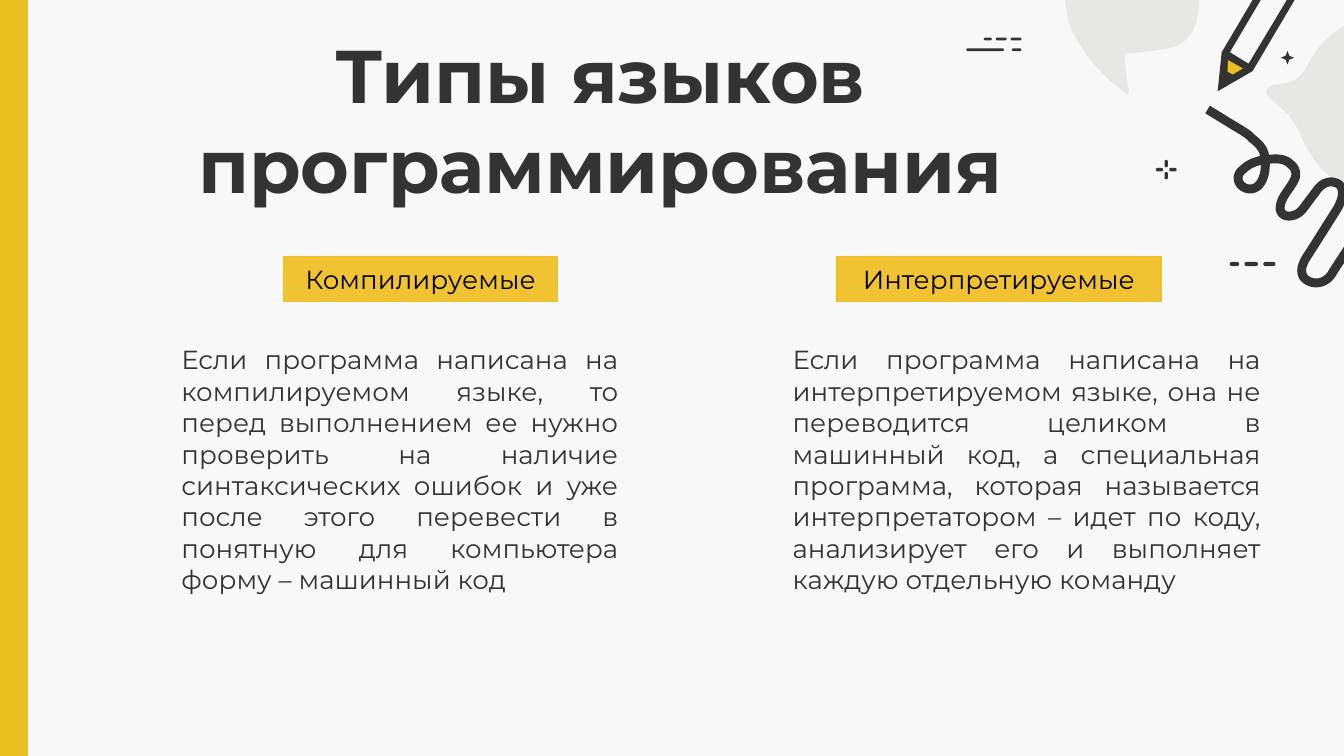
from pptx import Presentation, util as u
from pptx.dml.color import RGBColor
from pptx.enum import shapes, text

FONT = "Montserrat"
DARK, GREY, PAPER = "333333", "E7E7E5", "F8F8F8"
GOLD, AMBER = "EBC122", "F1C232"
KIND, ALIGN = shapes.MSO_SHAPE, text.PP_ALIGN
STEP = 2.54 / 100  # cm in one unit of the drawing grid


def color(code):
    return RGBColor.from_string(code)


def paint(shape, fill, line=None):
    shape.shadow.inherit = False
    shape.fill.solid()
    shape.fill.fore_color.rgb = color(fill)
    if line:
        shape.line.color.rgb = color(line)
        shape.line.width = u.Pt(0.75)
    else:
        shape.line.fill.background()
    return shape


def block(slide, kind, box, fill, line=None):
    shape = slide.shapes.add_shape(kind, *map(u.Cm, box))
    return paint(shape, fill, line)


def write(shape, words, size, align, code, bold=False):
    frame = shape.text_frame
    frame.word_wrap = True
    frame.margin_left = frame.margin_right = u.Cm(0.25)
    frame.margin_top = frame.margin_bottom = u.Cm(0.25)
    frame.text = words
    para = frame.paragraphs[0]
    para.alignment = align
    font = para.runs[0].font
    font.name, font.size, font.bold = FONT, u.Pt(size), bold
    font.color.rgb = color(code)


def label(slide, box, *style):
    write(slide.shapes.add_textbox(*map(u.Cm, box)), *style)


def trace(start, parts):
    """Points along parts: pairs are straight ends, sixes are Bezier curves."""
    points = [start]
    for part in parts:
        if len(part) == 2:
            points.append(part)
            continue
        ends = [points[-1], part[:2], part[2:4], part[4:]]
        for i in range(1, 13):
            t = i / 12
            mix = (1 - t) ** 3, 3 * t * (1 - t) ** 2, 3 * t * t * (1 - t), t ** 3
            points.append(tuple(sum(m * e[k] for m, e in zip(mix, ends))
                                for k in (0, 1)))
    return points


def outline(slide, left, top, start, parts, close=True):
    points = [(u.Cm(left + x * STEP), u.Cm(top + y * STEP))
              for x, y in trace(start, parts)]
    pen = slide.shapes.build_freeform(*points[0])
    pen.add_line_segments(points[1:], close=close)
    return pen.convert_to_shape()


def bubbles(slide, left, top):
    right = (391, 45), [
        (410, 77, 399, 119, 366, 137), (334, 156, 292, 145, 274, 113),
        (270, 106, 269, 104, 269, 104), (268, 101, 267, 98, 265, 95),
        (263, 91, 260, 87, 258, 85), (245, 73),
        (244, 72, 244, 71, 243, 71), (241, 67, 243, 64, 248, 63), (255, 62),
        (262, 62, 269, 56, 272, 50), (272, 50, 282, 29, 299, 20),
        (331, 1, 373, 12, 391, 45)]
    upper = (128, -57), [
        (120, -57, 110, -56, 104, -49), (89, -36, 88, 10, 101, 29),
        (110, 45, 122, 58, 137, 69), (138, 71, 140, 69, 140, 67),
        (138, 58, 137, 49, 137, 40), (148, 39, 159, 38, 169, 36),
        (191, 32, 193, 10, 192, -8), (192, -18, 192, -29, 189, -37),
        (187, -45, 181, -51, 169, -53), (156, -56, 142, -57, 128, -57)]
    for start, parts in (right, upper):
        paint(outline(slide, left, top, start, parts), GREY)


def pencil(slide, left, top):
    for fill, start, *ends in (
            (DARK, (274, -18), (251, -32), (209, 39), (206, 68), (232, 53)),
            (PAPER, (267, -16), (253, -25), (214, 41), (228, 49)),
            (GOLD, (228, 49), (214, 41), (213, 58)),
            (DARK, (230, 48), (212, 37), (209, 42), (227, 52)),
            (DARK, (211, 52), (208, 57), (215, 61), (218, 56))):
        paint(outline(slide, left, top, start, ends), fill)


def squiggle(slide, left, top):
    curve = outline(slide, left, top, (198.5, 81.5), [
        (218, 93.5), (224, 97, 229, 100, 231, 102.5),
        (236, 106.5, 240, 110, 241, 116), (242, 122, 242, 132, 236.5, 138),
        (233.5, 141, 228, 142, 223.5, 138), (219, 133, 222, 128, 225, 126),
        (230, 121, 237, 119, 245, 118.5), (250, 118, 256, 118, 260, 122),
        (264, 125, 265, 129, 263.5, 133), (260, 141, 252, 147, 252.5, 156),
        (254, 163, 264, 162, 269, 156), (279.5, 142),
        (283, 137, 289, 133, 296, 137), (301, 141, 299, 149, 294, 157),
        (275, 187), (271, 193, 266, 200, 270, 206.5),
        (276, 213, 287, 212, 292, 202), (335, 136)], close=False)
    curve.shadow.inherit = False
    curve.fill.background()
    curve.line.color.rgb = color(DARK)
    curve.line.width = u.Pt(4.75)


def dashes(slide, left, top):
    rows = ((36, 2, ((19, 28), (53, 7))),
            (28, 2, ((32, 6), (41, 8), (52, 8))),
            (195, 3, ((215, 7), (226, 10), (240, 9))),
            (125, 2.5, ((160, 5.5), (170, 5.5))))
    bars = [(x, y, w, h) for y, h, row in rows for x, w in row]
    bars += [(166.5, y, 2.5, 5.5) for y in (119, 128)]
    for x, y, w, h in bars:
        box = left + x * STEP, top + y * STEP, w * STEP, h * STEP
        block(slide, KIND.ROUNDED_RECTANGLE, box, DARK).adjustments[0] = 0.5
    box = left + 253 * STEP, top + 38 * STEP, 10 * STEP, 10 * STEP
    block(slide, KIND.STAR_4_POINT, box, DARK).adjustments[0] = 0.2


def corner(slide, left, top):
    for draw in (bubbles, pencil, squiggle, dashes):
        draw(slide, left, top)


def column(slide, box, shift, wide, head, body):
    """Place a heading chip, shifted and sized, above justified body text."""
    left, top, width, height = box
    chip = block(slide, KIND.RECTANGLE, (left + shift, top, wide, 0.85),
                 AMBER, GOLD)
    write(chip, head, 14, ALIGN.CENTER, "000000")
    chip.text_frame.vertical_anchor = text.MSO_ANCHOR.MIDDLE
    label(slide, (left, top + 1.4, width, height - 1.4), body, 14,
          ALIGN.JUSTIFY, DARK)


def main():
    deck = Presentation()
    deck.slide_width, deck.slide_height = u.Cm(25.4), u.Cm(14.29)
    slide = deck.slides.add_slide(deck.slide_layouts[6])
    back = slide.background.fill
    back.solid()
    back.fore_color.rgb = color(PAPER)
    block(slide, KIND.RECTANGLE, (-0.03, 0, 0.54, 14.29), GOLD, GOLD)
    corner(slide, 17.78, 0)
    label(slide, (1.12, 0.3, 20.45, 1.6), "Типы языков программирования",
          40, ALIGN.CENTER, DARK, True)
    column(slide, (3.18, 4.85, 8.76, 6.48), 2.18, 5.18, "Компилируемые",
           "Если программа написана на компилируемом языке, то перед "
           "выполнением ее нужно проверить на наличие синтаксических ошибок "
           "и уже после этого перевести в понятную для компьютера форму – "
           "машинный код")
    column(slide, (14.73, 4.85, 9.35, 5.31), 1.09, 6.12, "Интерпретируемые",
           "Если программа написана на интерпретируемом языке, она не "
           "переводится целиком в машинный код, а специальная программа, "
           "которая называется интерпретатором – идет по коду, анализирует "
           "его и выполняет каждую отдельную команду")
    deck.save("out.pptx")


if __name__ == "__main__":
    main()
